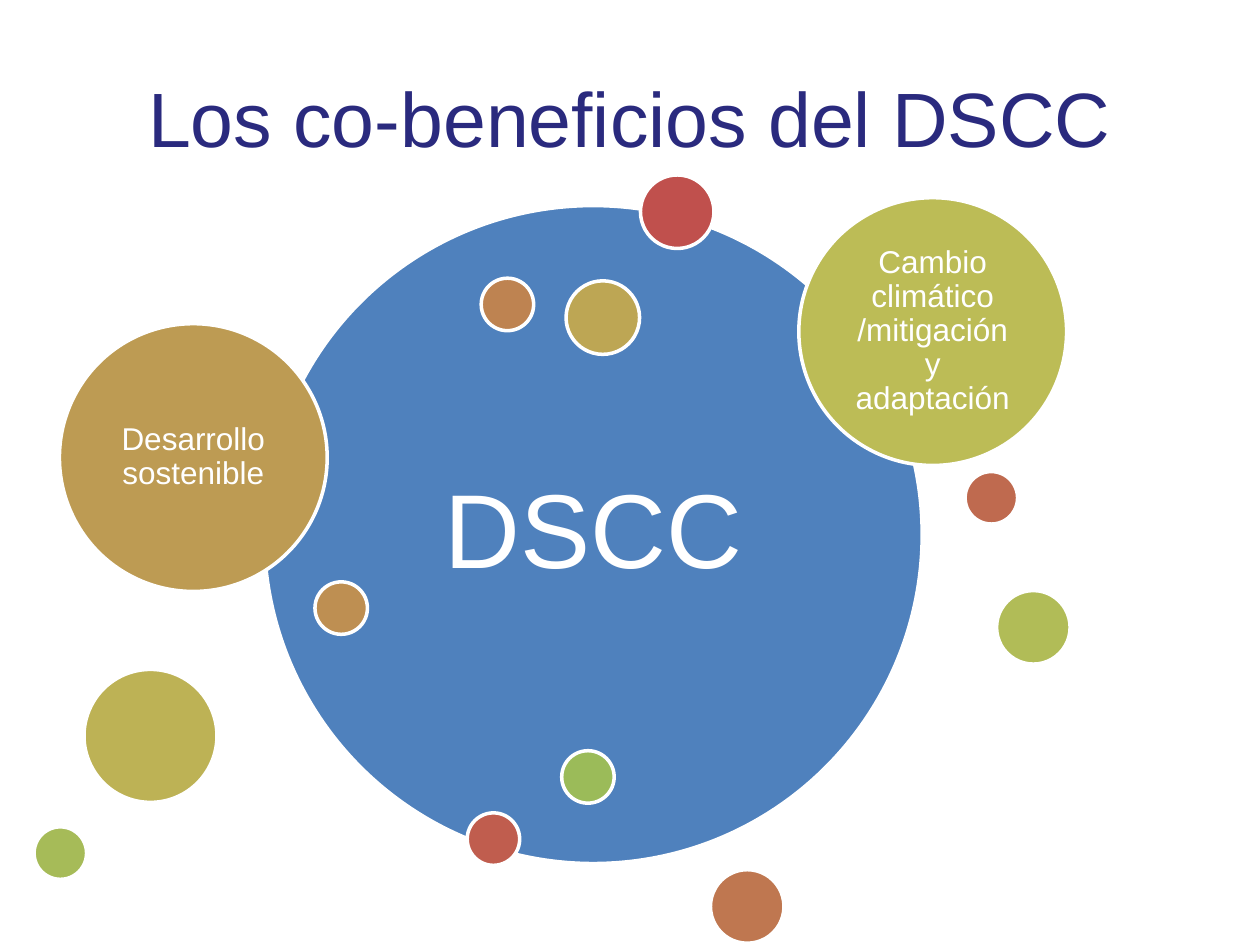
from pptx import Presentation
from pptx.dml.color import RGBColor
from pptx.enum.shapes import MSO_SHAPE
from pptx.enum.text import MSO_ANCHOR, PP_ALIGN
from pptx.util import Pt

OVAL = MSO_SHAPE.OVAL
MIDDLE = MSO_ANCHOR.MIDDLE
CENTER = PP_ALIGN.CENTER

FONT = "Arial"
COLORS = {
    "title": "2A2A7E", "white": "FFFFFF", "blue": "4F81BD",
    "red": "C0504D", "brick": "C05D4E", "rust": "BF6A4F",
    "copper": "BF7750", "orange": "BE8351", "amber": "BE8F52",
    "ochre": "BD9B53", "gold": "BDA654", "mustard": "BDB255",
    "olive": "BCBC56", "lime": "B1BC57", "leaf": "A6BB58", "green": "9BBB59",
}
DIAMETERS = {"hub": 376, "topic": 153, "large": 76, "medium": 42, "small": 30}
LABEL_STYLES = {"hub": (60, 18), "topic": (18, 5)}

TITLE = "Los co-beneficios del DSCC"
CIRCLES = [
    ("hub", 151, 117.5, "blue", "DSCC"),
    ("medium", 366, 100, "red", ""),
    ("small", 267, 464.5, "brick", ""),
    ("small", 551.5, 269.5, "rust", ""),
    ("medium", 406, 497, "copper", ""),
    ("small", 275, 159, "orange", ""),
    ("small", 180, 332.5, "amber", ""),
    ("topic", 34, 185, "ochre", "Desarrollo sostenible"),
    ("medium", 323.5, 160.5, "gold", ""),
    ("large", 48, 382.5, "mustard", ""),
    ("topic", 456.5, 113, "olive", "Cambio climático /mitigación y adaptación"),
    ("medium", 569.5, 337.5, "lime", ""),
    ("small", 19.5, 472.5, "leaf", ""),
    ("small", 321, 429, "green", ""),
]


def color(name):
    return RGBColor.from_string(COLORS[name])


def write(box, text, size, color_name, inset, spacing):
    frame = box.text_frame
    frame.word_wrap = True
    frame.vertical_anchor = MIDDLE
    frame.margin_left = frame.margin_right = Pt(inset)
    frame.margin_top = frame.margin_bottom = Pt(inset)
    para = frame.paragraphs[0]
    para.alignment = CENTER
    para.line_spacing = spacing
    span = para.add_run()
    span.text = text
    span.font.name = FONT
    span.font.size = Pt(size)
    span.font.color.rgb = color(color_name)


def add_circle(page, kind, left, top, fill, label):
    diameter = Pt(DIAMETERS[kind])
    circle = page.shapes.add_shape(OVAL, Pt(left), Pt(top), diameter, diameter)
    circle.shadow.inherit = False
    circle.fill.solid()
    circle.fill.fore_color.rgb = color(fill)
    circle.line.color.rgb = color("white")
    circle.line.width = Pt(2)
    if label:
        size, inset = LABEL_STYLES[kind]
        write(circle, label, size, "white", inset, 0.9)


def main():
    deck = Presentation()
    deck.slide_width, deck.slide_height = Pt(720), Pt(540)
    page = deck.slides.add_slide(deck.slide_layouts[6])
    title = page.shapes.add_textbox(Pt(36), Pt(21.6), Pt(648), Pt(90))
    write(title, TITLE, 44, "title", 4, 1.0)
    for circle in CIRCLES:
        add_circle(page, *circle)
    deck.save("out.pptx")


if __name__ == "__main__":
    main()
